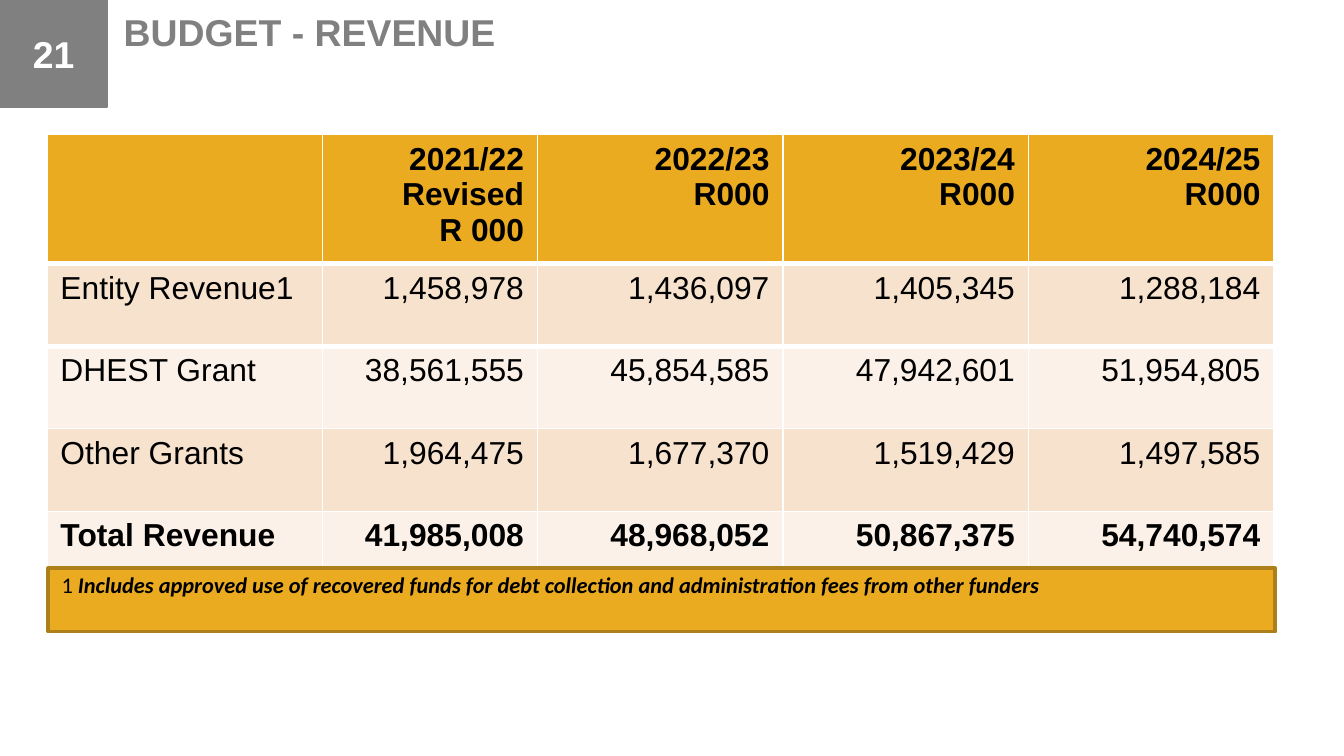
"""Build the revenue budget slide."""
from lxml import etree
from pptx import Presentation
from pptx.dml.color import RGBColor
from pptx.enum.shapes import MSO_SHAPE
from pptx.enum.text import MSO_ANCHOR, MSO_AUTO_SIZE, PP_ALIGN
from pptx.oxml.ns import qn
from pptx.util import Inches, Pt

RECT = MSO_SHAPE.RECTANGLE
TOP, MIDDLE = MSO_ANCHOR.TOP, MSO_ANCHOR.MIDDLE
LEFT, CENTER, RIGHT = PP_ALIGN.LEFT, PP_ALIGN.CENTER, PP_ALIGN.RIGHT
FIXED = MSO_AUTO_SIZE.NONE

GRAY, GOLD, BROWN = "808080", "EAAB21", "AD7F18"
BLACK, WHITE = "000000", "FFFFFF"
BANDS = ["F7E2CD", "FBF1E8"]

HEAD = ["", "2021/22 Revised\nR 000", "2022/23\nR000", "2023/24\nR000", "2024/25\nR000"]
ROWS = [
    ["Entity Revenue1", "1,458,978", "1,436,097", "1,405,345", "1,288,184"],
    ["DHEST Grant", "38,561,555", "45,854,585", "47,942,601", "51,954,805"],
    ["Other Grants", "1,964,475", "1,677,370", "1,519,429", "1,497,585"],
    ["Total Revenue", "41,985,008", "48,968,052", "50,867,375", "54,740,574"],
]
NOTE = "Includes approved use of recovered funds for debt collection and administration fees from other funders"


def color(code):
    return RGBColor.from_string(code)


class Deck:
    def __init__(self):
        self.prs = Presentation()
        self.prs.slide_width = Inches(10)
        self.prs.slide_height = Inches(10 * 9 / 16)
        self.slide = self.prs.slides.add_slide(self.prs.slide_layouts[5])

    def style(self, frame, size, code, bold=False, align=LEFT, font="Arial"):
        for para in frame.paragraphs:
            para.alignment = align
            for run in para.runs:
                run.font.name, run.font.size = font, Pt(size)
                run.font.bold, run.font.color.rgb = bold, color(code)

    def title(self, text, x, y, w, h):
        shape = self.slide.shapes.title
        shape.left, shape.top, shape.width, shape.height = map(Inches, (x, y, w, h))
        frame = shape.text_frame
        frame.text = text
        frame.auto_size, frame.vertical_anchor = FIXED, TOP
        self.style(frame, 20, GRAY, True)

    def box(self, x, y, w, h, fill, line, width):
        shape = self.slide.shapes.add_shape(RECT, *map(Inches, (x, y, w, h)))
        shape.shadow.inherit = False
        shape.fill.solid()
        shape.fill.fore_color.rgb = color(fill)
        shape.line.color.rgb = color(line)
        shape.line.width = Pt(width)
        return shape.text_frame

    def badge(self, text, side):
        frame = self.box(0, 0, side, side, GRAY, GRAY, 1)
        frame.text = text
        frame.vertical_anchor = MIDDLE
        self.style(frame, 20, WHITE, True, CENTER)

    def edges(self, cell, sides):
        props = cell._tc.get_or_add_tcPr()
        for spot, (side, width) in enumerate(sides.items()):
            edge = etree.Element(qn("a:" + side), w=str(Pt(width)))
            fill = etree.SubElement(edge, qn("a:solidFill"))
            etree.SubElement(fill, qn("a:srgbClr"), val=WHITE)
            props.insert(spot, edge)

    def table(self, rows, x, y, widths, heights):
        size = map(Inches, (x, y, sum(widths), sum(heights)))
        grid = self.slide.shapes.add_table(len(rows), len(widths), *size).table
        for col, width in zip(grid.columns, widths):
            col.width = Inches(width)
        for i, row in enumerate(rows):
            grid.rows[i].height = Inches(heights[i])
            bold = i in (0, len(rows) - 1)
            for j, text in enumerate(row):
                cell = grid.cell(i, j)
                cell.text = text
                cell.fill.solid()
                cell.fill.fore_color.rgb = color(BANDS[(i - 1) % 2] if i else GOLD)
                self.style(cell.text_frame, 17, BLACK, bold, RIGHT if j else LEFT)
                if i == 0:
                    self.edges(cell, {"lnL": 1, "lnR": 1, "lnT": 1, "lnB": 3})
                elif i == 1:
                    self.edges(cell, {"lnT": 3})

    def note(self, mark, text, x, y, w, h):
        frame = self.box(x, y, w, h, GOLD, BROWN, 2.08)
        frame.vertical_anchor, frame.margin_top = TOP, Inches(0.02)
        para = frame.paragraphs[0]
        para.text = mark + " "
        para.add_run().text = text
        self.style(frame, 12, BLACK, font="Calibri")
        para.runs[1].font.bold = para.runs[1].font.italic = True


def main():
    deck = Deck()
    deck.title("BUDGET - REVENUE", 0.82, 0.02, 8.79, 0.43)
    deck.badge("21", 0.8)
    widths = [2.05, 1.6] + [(9.13 - 3.65) / 3] * 3
    heights = [0.96] + [(3.42 - 0.96) / 4] * 4
    deck.table([HEAD] + ROWS, 0.35, 1, widths, heights)
    deck.note("1", NOTE, 0.36, 4.23, 9.13, 0.47)
    deck.prs.save("out.pptx")


if __name__ == "__main__":
    main()
